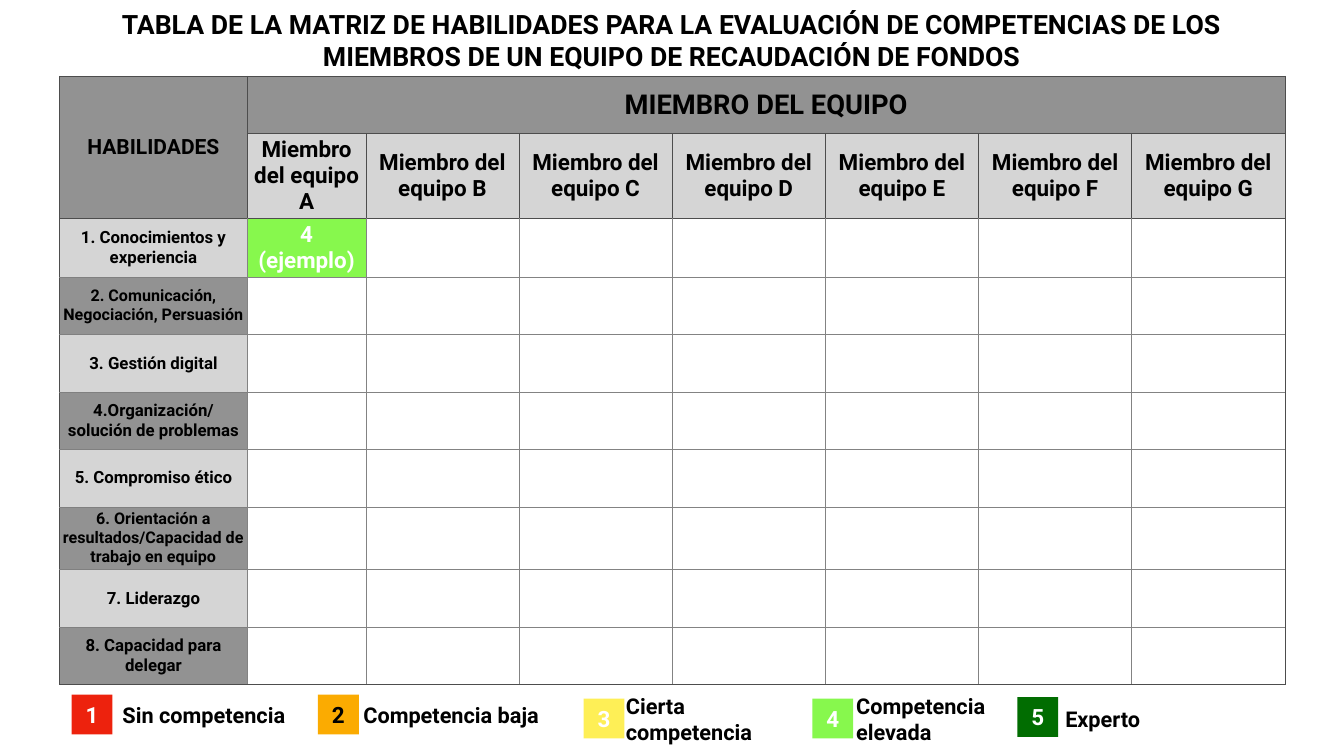
import dataclasses
import pptx
import pptx.util
import pptx.dml.color
import pptx.enum.shapes
import pptx.enum.text
import lxml.etree

SCALE = 9144
CENTER = pptx.enum.text.PP_ALIGN.CENTER
LEFT = pptx.enum.text.PP_ALIGN.LEFT
MIDDLE = pptx.enum.text.MSO_ANCHOR.MIDDLE


@dataclasses.dataclass(frozen=True)
class Theme:
    font: str = "Roboto"
    black: str = "000000"
    white: str = "FFFFFF"
    dark: str = "929292"
    light: str = "D5D5D5"
    frame: str = "4D4D4D"
    grid: str = "838383"
    rule: str = "808080"
    sample: str = "87F84D"
    title: int = 38
    team: int = 39
    corner: int = 30
    member: int = 32
    skill: int = 24
    tight: int = 23
    label: int = 31
    inset: int = 6


THEME = Theme()

SKILLS = [
    ("1. Conocimientos y experiencia", THEME.skill),
    ("2. Comunicación, Negociación, Persuasión", THEME.tight),
    ("3. Gestión digital", THEME.skill),
    ("4.Organización/solución de problemas", THEME.skill),
    ("5. Compromiso ético", THEME.skill),
    ("6. Orientación a resultados/Capacidad de trabajo en equipo", THEME.tight),
    ("7. Liderazgo", THEME.skill),
    ("8. Capacidad para delegar", THEME.skill),
]

LEVELS = [
    ("Sin competencia", "ED220D", THEME.white, (142, 1378), (237, 1386, 348, 63)),
    ("Competencia baja", "FBAB01", THEME.black, (631, 1378), (715, 1386, 389, 63)),
    ("Cierta competencia", "FEEF56", THEME.white, (1158, 1386), (1236, 1368, 348, 116)),
    ("Competencia elevada", THEME.sample, THEME.white, (1612, 1386), (1693, 1368, 348, 116)),
    ("Experto", "016D01", THEME.white, (2019, 1383), (2108, 1394, 186, 63)),
]


def px(count):
    return pptx.util.Emu(count * SCALE)


def box(*sides):
    return [px(side) for side in sides]


def paint(fill, color):
    fill.solid()
    fill.fore_color.rgb = pptx.dml.color.RGBColor.from_string(color)


def pad(item):
    item.margin_left = item.margin_right = px(THEME.inset)
    item.margin_top = item.margin_bottom = px(THEME.inset)
    item.vertical_anchor = MIDDLE


def write(frame, text, size, color=THEME.black, align=CENTER):
    frame.text = text
    frame.word_wrap = True
    for para in frame.paragraphs:
        para.alignment = align
        para.font.name = THEME.font
        para.font.size = pptx.util.Pt(size)
        para.font.bold = True
        para.font.color.rgb = pptx.dml.color.RGBColor.from_string(color)


def add_title(slide, text):
    title = slide.shapes.title
    title.left, title.top, title.width, title.height = box(106, 10, 2454, 139)
    write(title.text_frame, text, THEME.title)
    pad(title.text_frame)
    title.text_frame.auto_size = pptx.enum.text.MSO_AUTO_SIZE.NONE


def edge(cell, colors):
    props = cell._tc.get_or_add_tcPr()
    for place, (side, color) in enumerate(zip("LRTB", colors)):
        line = lxml.etree.Element(pptx.oxml.ns.qn(f"a:ln{side}"), w="12700")
        fill = lxml.etree.SubElement(line, pptx.oxml.ns.qn("a:solidFill"))
        lxml.etree.SubElement(fill, pptx.oxml.ns.qn("a:srgbClr"), val=color)
        props.insert(place, line)


def borders(row, col, rows, cols):
    if row < 2:
        return [THEME.frame] * 4
    inner = THEME.grid if col else THEME.rule
    outer = [col == 0, col == cols - 1, row == 2, row == rows - 1]
    return [THEME.frame if hit else inner for hit in outer]


def fill_cell(cell, text, size, back, color=THEME.black):
    write(cell.text_frame, text, size, color)
    pad(cell)
    paint(cell.fill, back)


def add_matrix(slide):
    widths = [373, 235] + [304] * 6
    rows, cols = len(SKILLS) + 2, len(widths)
    frame = slide.shapes.add_table(rows, cols, *box(118, 151, sum(widths), 114 * rows))
    table = frame.table
    table.first_row = table.horz_banding = False
    for col, width in enumerate(widths):
        table.columns[col].width = px(width)
    for row in range(rows):
        table.rows[row].height = px(114)
        for col in range(cols):
            cell = table.cell(row, col)
            cell.fill.background()
            edge(cell, borders(row, col, rows, cols))
    table.cell(0, 0).merge(table.cell(1, 0))
    table.cell(0, 1).merge(table.cell(0, cols - 1))
    fill_cell(table.cell(0, 0), "HABILIDADES", THEME.corner, THEME.dark)
    fill_cell(table.cell(0, 1), "MIEMBRO DEL EQUIPO", THEME.team, THEME.dark)
    for col, name in enumerate("ABCDEFG", 1):
        fill_cell(table.cell(1, col), f"Miembro del equipo {name}", THEME.member, THEME.light)
    for row, (skill, size) in enumerate(SKILLS, 2):
        back = THEME.dark if row % 2 else THEME.light
        fill_cell(table.cell(row, 0), skill, size, back)
    fill_cell(table.cell(2, 1), "4\n(ejemplo)", THEME.member, THEME.sample, THEME.white)


def add_badge(slide, text, back, color, spot):
    badge = slide.shapes.add_shape(
        pptx.enum.shapes.MSO_SHAPE.RECTANGLE, *box(*spot, 81, 79))
    badge.shadow.inherit = False
    badge.line.fill.background()
    paint(badge.fill, back)
    write(badge.text_frame, text, THEME.member, color)
    pad(badge.text_frame)


def add_label(slide, text, area):
    label = slide.shapes.add_textbox(*box(*area))
    write(label.text_frame, text, THEME.label, align=LEFT)
    pad(label.text_frame)


def main():
    deck = pptx.Presentation()
    deck.slide_width, deck.slide_height = box(2667, 1500)
    slide = deck.slides.add_slide(deck.slide_layouts[5])
    paint(slide.background.fill, THEME.white)
    add_title(slide, "TABLA DE LA MATRIZ DE HABILIDADES PARA LA EVALUACIÓN DE "
              "COMPETENCIAS DE LOS MIEMBROS DE UN EQUIPO DE RECAUDACIÓN DE FONDOS")
    add_matrix(slide)
    for level, (name, back, color, spot, area) in enumerate(LEVELS, 1):
        add_badge(slide, str(level), back, color, spot)
        add_label(slide, name, area)
    deck.save("out.pptx")


if __name__ == "__main__":
    main()
